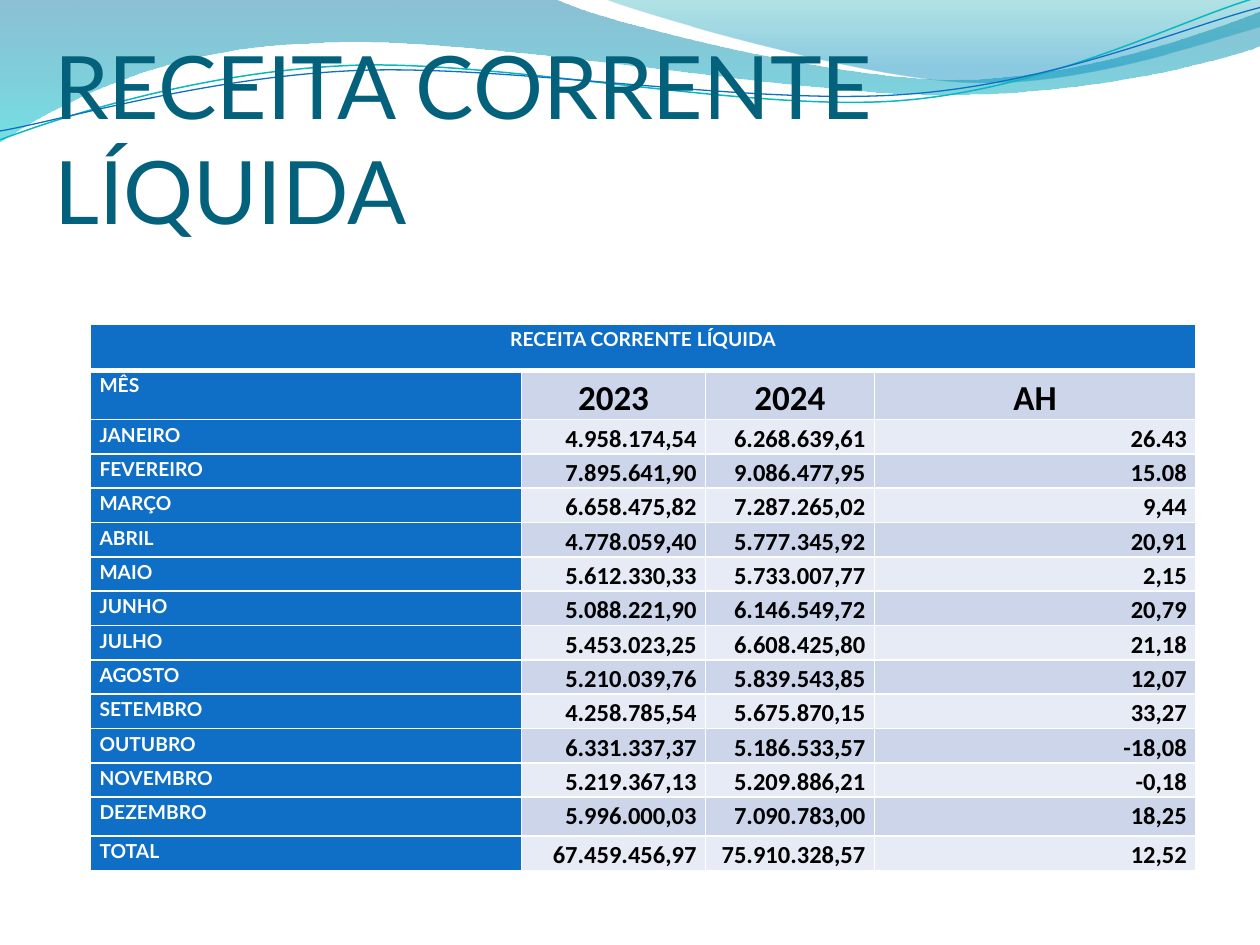
import math
from dataclasses import dataclass

import pptx
import pptx.dml.color
import pptx.enum.text
import pptx.oxml
import pptx.oxml.ns
import pptx.util

Inches = pptx.util.Inches
Pt = pptx.util.Pt
ALIGN = pptx.enum.text.PP_ALIGN
Point = tuple[float, float]

BLUE, WHITE, BLACK, TEAL = "0F6FC6", "FFFFFF", "000000", "04617B"
BANDS = ("E7EBF5", "CCD5EA")
TITLE = "RECEITA CORRENTE LÍQUIDA"
COLUMN_WIDTHS = (3.42, 1.46, 1.34, 2.55)
MONTH_HEIGHT = 3 / 11
ROW_HEIGHTS = [0.37, 0.39] + [MONTH_HEIGHT] * 11 + [0.31, MONTH_HEIGHT]
ROWS = (
    ("MÊS", "2023", "2024", "AH"),
    ("JANEIRO", "4.958.174,54", "6.268.639,61", "26.43"),
    ("FEVEREIRO", "7.895.641,90", "9.086.477,95", "15.08"),
    ("MARÇO", "6.658.475,82", "7.287.265,02", "9,44"),
    ("ABRIL", "4.778.059,40", "5.777.345,92", "20,91"),
    ("MAIO", "5.612.330,33", "5.733.007,77", "2,15"),
    ("JUNHO", "5.088.221,90", "6.146.549,72", "20,79"),
    ("JULHO", "5.453.023,25", "6.608.425,80", "21,18"),
    ("AGOSTO", "5.210.039,76", "5.839.543,85", "12,07"),
    ("SETEMBRO", "4.258.785,54", "5.675.870,15", "33,27"),
    ("OUTUBRO", "6.331.337,37", "5.186.533,57", "-18,08"),
    ("NOVEMBRO", "5.219.367,13", "5.209.886,21", "-0,18"),
    ("DEZEMBRO", "5.996.000,03", "7.090.783,00", "18,25"),
    ("TOTAL", "67.459.456,97", "75.910.328,57", "12,52"),
)


@dataclass
class Stop:
    position: float
    color: str
    opacity: int


@dataclass
class Wave:
    start: Point
    segments: list[tuple[Point, ...]]
    stops: tuple[Stop, ...] = ()
    line: str = ""
    weight: float = 0
    rotation: float = 0
    center: Point = (0, 0)


@dataclass
class TextStyle:
    font: str
    size: float
    color: str
    bold: bool = True
    align: ALIGN = ALIGN.LEFT
    spacing: float = 1.15


WAVES = (
    Wave((0, 0), [
        ((4.4, -0.01),),
        ((4.76, 0.17), (6.64, 0.63), (7.58, 0.63)),
        ((8.53, 0.63), (9.58, 0.26), (10, 0.09)),
        ((10.01, 0.36),),
        ((9.83, 0.44), (8.7, 0.76), (7.46, 0.75)),
        ((6.22, 0.75), (3.82, 0.28), (2.57, 0.34)),
        ((1.29, 0.36), (0.46, 0.83), (-0.01, 1.13)),
        ((0, 0),),
    ], stops=(Stop(0, "0074A1", 45), Stop(1, "00C6CF", 55))),
    Wave((4.79, -0.01), [
        ((5.09, 0.11), (6.82, 0.62), (7.69, 0.65)),
        ((8.56, 0.69), (9.61, 0.32), (10, 0.21)),
        ((10, 0),),
        ((4.79, -0.01),),
    ], stops=(Stop(0, "00A1A9", 30), Stop(0.8, "008BBF", 45))),
    Wave((0, 1.11), [
        ((0.48, 0.93), (1.58, 0.57), (2.77, 0.52)),
        ((3.95, 0.47), (5.93, 0.89), (7.13, 0.8)),
        ((8.33, 0.71), (9.38, 0.15), (9.98, -0.02)),
    ], line="0AB8BF", weight=0.85, rotation=357.3, center=(4.99, 0.57)),
    Wave((0, 1.04), [
        ((0.47, 0.96), (1.64, 0.61), (2.83, 0.56)),
        ((4.03, 0.51), (5.97, 0.84), (7.17, 0.75)),
        ((8.36, 0.67), (9.41, 0.21), (10, 0.06)),
    ], line=BLUE, weight=0.75, rotation=357.3, center=(5, 0.59)),
)


def rgb(color: str) -> pptx.dml.color.RGBColor:
    return pptx.dml.color.RGBColor.from_string(color)


def unrotate(point: Point, wave: Wave) -> tuple[int, int]:
    angle = math.radians(-wave.rotation)
    cx, cy = wave.center
    dx, dy = point[0] - cx, point[1] - cy
    return (Inches(cx + dx * math.cos(angle) - dy * math.sin(angle)),
            Inches(cy + dx * math.sin(angle) + dy * math.cos(angle)))


def bend(sp, segments: list[list[tuple[int, int]]]) -> None:
    lines = list(sp._element.spPr.iter(pptx.oxml.ns.qn("a:lnTo")))
    for line, points in zip(lines, segments):
        if len(points) == 3:
            nodes = "".join(f'<a:pt x="{x - sp.left}" y="{y - sp.top}"/>' for x, y in points)
            line.getparent().replace(line, pptx.oxml.parse_xml(
                f'<a:cubicBezTo {pptx.oxml.ns.nsdecls("a")}>{nodes}</a:cubicBezTo>'))


def draw_wave(s, wave: Wave) -> None:
    segments = [[unrotate(point, wave) for point in segment] for segment in wave.segments]
    builder = s.shapes.build_freeform(*unrotate(wave.start, wave), scale=1.0)
    builder.add_line_segments([points[-1] for points in segments], close=bool(wave.stops))
    sp = builder.convert_to_shape()
    bend(sp, segments)
    sp.rotation = wave.rotation
    sp.shadow.inherit = False
    if not wave.stops:
        sp.fill.background()
        sp.line.color.rgb = rgb(wave.line)
        sp.line.width = Pt(wave.weight)
        return
    sp.line.fill.background()
    sp.fill.gradient()
    sp.fill.gradient_angle = 270
    for target, stop in zip(sp.fill.gradient_stops, wave.stops):
        target.position = stop.position
        target.color.rgb = rgb(stop.color)
    colors = sp._element.spPr.iter(pptx.oxml.ns.qn("a:srgbClr"))
    for node, stop in zip(colors, wave.stops):
        node.append(pptx.oxml.parse_xml(
            f'<a:alpha {pptx.oxml.ns.nsdecls("a")} val="{stop.opacity * 1000}"/>'))


def write_text(tf, text: str, style: TextStyle) -> None:
    p = tf.paragraphs[0]
    p.text = text
    p.alignment = style.align
    p.line_spacing = style.spacing
    p.font.name = style.font
    p.font.size = Pt(style.size)
    p.font.bold = style.bold
    p.font.color.rgb = rgb(style.color)


def set_border(cell, side: str, width: float) -> None:
    cell._tc.get_or_add_tcPr().append(pptx.oxml.parse_xml(
        f'<a:ln{side} {pptx.oxml.ns.nsdecls("a")} w="{Pt(width)}">'
        f'<a:solidFill><a:srgbClr val="{WHITE}"/></a:solidFill></a:ln{side}>'))


def draw_cell(cell, text: str, fill: str, style: TextStyle, bottom: float = 1) -> None:
    for side, width in (("L", 1), ("R", 1), ("T", 1), ("B", bottom)):
        set_border(cell, side, width)
    cell.fill.solid()
    cell.fill.fore_color.rgb = rgb(fill)
    cell.margin_left = cell.margin_right = Inches(0.07)
    cell.margin_top = cell.margin_bottom = 0
    write_text(cell.text_frame, text, style)


def draw_table(s) -> None:
    frame = s.shapes.add_table(len(ROW_HEIGHTS), len(COLUMN_WIDTHS), Inches(0.72), Inches(2.57),
                               Inches(sum(COLUMN_WIDTHS)), Inches(sum(ROW_HEIGHTS)))
    table = frame.table
    for column, width in zip(table.columns, COLUMN_WIDTHS):
        column.width = Inches(width)
    for row, height in zip(table.rows, ROW_HEIGHTS):
        row.height = Inches(height)

    label = TextStyle("Lato", 11, WHITE)
    caption = TextStyle("Lato", 11, WHITE, align=ALIGN.CENTER)
    year = TextStyle("Calibri", 20, BLACK, align=ALIGN.CENTER)
    amount = TextStyle("Calibri", 14, BLACK, align=ALIGN.RIGHT)
    table.cell(0, 0).merge(table.cell(0, len(COLUMN_WIDTHS) - 1))
    draw_cell(table.cell(0, 0), TITLE, BLUE, caption, bottom=3)
    for i, values in enumerate(ROWS, 1):
        for j, value in enumerate(values):
            style = label if j == 0 else year if i == 1 else amount
            draw_cell(table.cell(i, j), value, BLUE if j == 0 else BANDS[i % 2], style)


def draw_title(s) -> None:
    sp = s.shapes.add_textbox(Inches(0.43), Inches(0.99), Inches(9.08), Inches(0.93))
    tf = sp.text_frame
    tf.word_wrap = True
    tf.vertical_anchor = pptx.enum.text.MSO_ANCHOR.BOTTOM
    tf.margin_left = tf.margin_right = tf.margin_bottom = 0
    write_text(tf, TITLE, TextStyle("Lato", 50, TEAL, bold=False, spacing=1.0))


def main() -> None:
    prs = pptx.Presentation()
    prs.slide_width, prs.slide_height = Inches(10), Inches(7.5)
    s = prs.slides.add_slide(prs.slide_layouts[6])
    for wave in WAVES:
        draw_wave(s, wave)
    draw_title(s)
    draw_table(s)
    prs.save("out.pptx")


if __name__ == "__main__":
    main()
